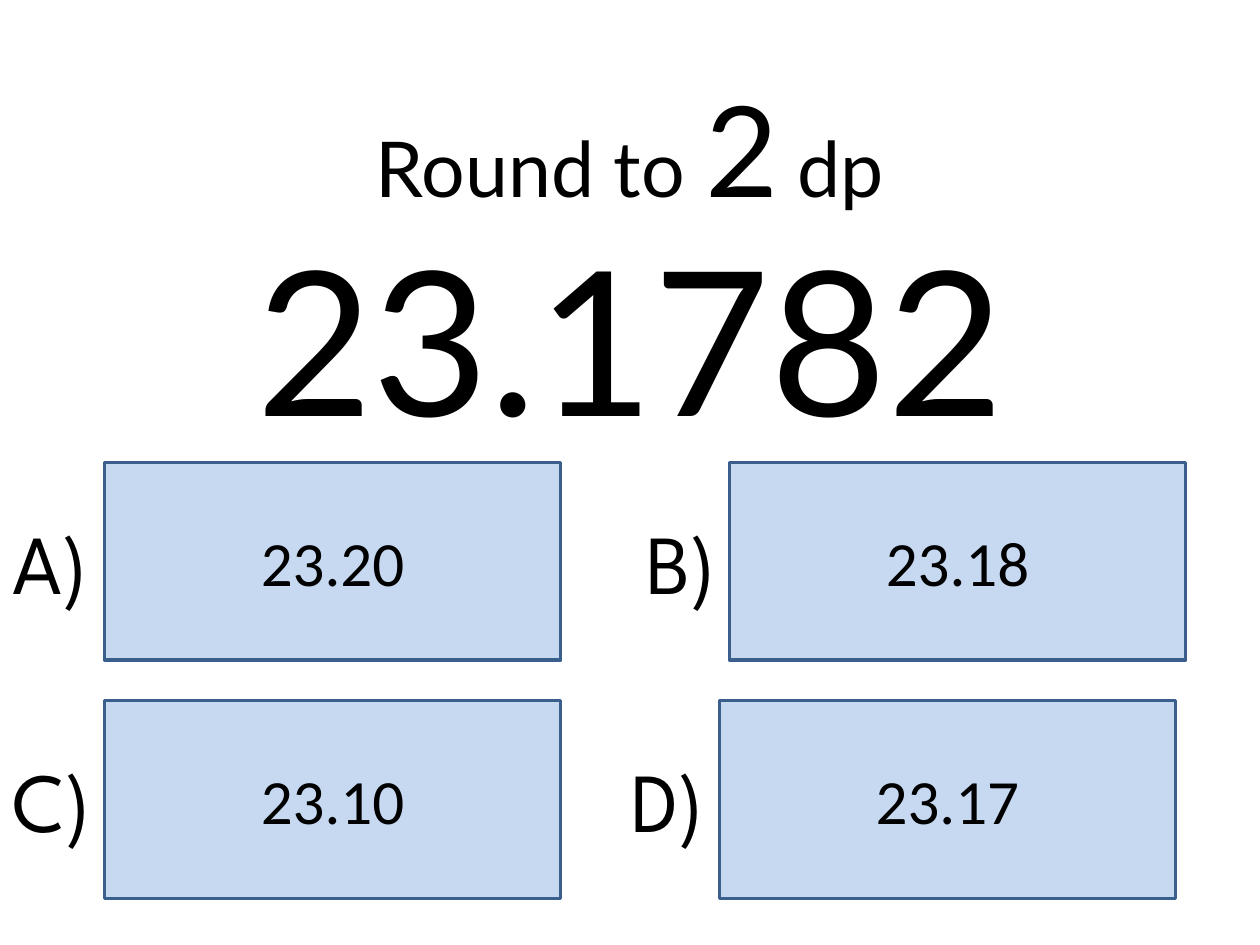
import pptx
import pptx.util
import pptx.dml.color
import pptx.enum.text
import pptx.enum.shapes

Inches, Pt = pptx.util.Inches, pptx.util.Pt
RGB = pptx.dml.color.RGBColor
Align = pptx.enum.text.PP_ALIGN
Anchor = pptx.enum.text.MSO_ANCHOR
Fit = pptx.enum.text.MSO_AUTO_SIZE

BLACK = RGB(0x00, 0x00, 0x00)
PALE = RGB(0xC6, 0xD9, 0xF1)
EDGE = RGB(0x3A, 0x5F, 0x8C)


def style(run, font, size):
    run.font.name = font
    run.font.size = Pt(size)
    run.font.color.rgb = BLACK


def center(frame):
    frame.word_wrap = True
    frame.auto_size = Fit.NONE
    frame.vertical_anchor = Anchor.MIDDLE
    frame.paragraphs[0].alignment = Align.CENTER


def add_title(slide, left, top, width, height):
    title = slide.shapes.title
    title.left, title.top = Inches(left), Inches(top)
    title.width, title.height = Inches(width), Inches(height)
    center(title.text_frame)
    for text, size in (("Round to ", 44), ("2", 72), (" dp", 44)):
        run = title.text_frame.paragraphs[0].add_run()
        run.text = text
        style(run, "Lato", size)


def add_number(slide, text, left, top, width, height):
    box = slide.shapes.add_textbox(
        Inches(left), Inches(top), Inches(width), Inches(height))
    box.text_frame.text = text
    center(box.text_frame)
    style(box.text_frame.paragraphs[0].runs[0], "Lato", 115)


def add_answer(slide, letter, value, mark, left, top, width, height):
    # Answer box
    card = slide.shapes.add_shape(
        pptx.enum.shapes.MSO_SHAPE.RECTANGLE,
        Inches(left), Inches(top), Inches(width), Inches(height))
    card.shadow.inherit = False
    card.fill.solid()
    card.fill.fore_color.rgb = PALE
    card.line.color.rgb = EDGE
    card.line.width = Pt(2)
    card.text_frame.text = value
    center(card.text_frame)
    style(card.text_frame.paragraphs[0].runs[0], "Calibri", 36)

    # Letter to the left, level with the middle of the box
    tall = 0.91
    label = slide.shapes.add_textbox(
        Inches(mark), Inches(top + (height - tall) / 2),
        Inches(0.95), Inches(tall))
    frame = label.text_frame
    frame.text = letter + ")"
    frame.word_wrap = False
    frame.auto_size = Fit.SHAPE_TO_FIT_TEXT
    frame.paragraphs[0].alignment = Align.LEFT
    style(frame.paragraphs[0].runs[0], "League Spartan", 48)


def main():
    deck = pptx.Presentation()
    deck.slide_width, deck.slide_height = Inches(10), Inches(7.5)
    slide = deck.slides.add_slide(deck.slide_layouts[5])

    # Question
    add_title(slide, 0.75, 0.36, 8.5, 1.61)
    add_number(slide, "23.1782", 0.75, 1.86, 8.5, 1.61)

    # Answers: letter, value, letter left, box left, box top
    upper, lower = 3.67, 5.56
    for letter, value, mark, left, top in (
            ("A", "23.20", 0, 0.83, upper),
            ("B", "23.18", 5.03, 5.79, upper),
            ("C", "23.10", 0, 0.83, lower),
            ("D", "23.17", 4.91, 5.71, lower)):
        add_answer(slide, letter, value, mark, left, top, 3.62, 1.57)

    deck.save("out.pptx")


if __name__ == "__main__":
    main()
